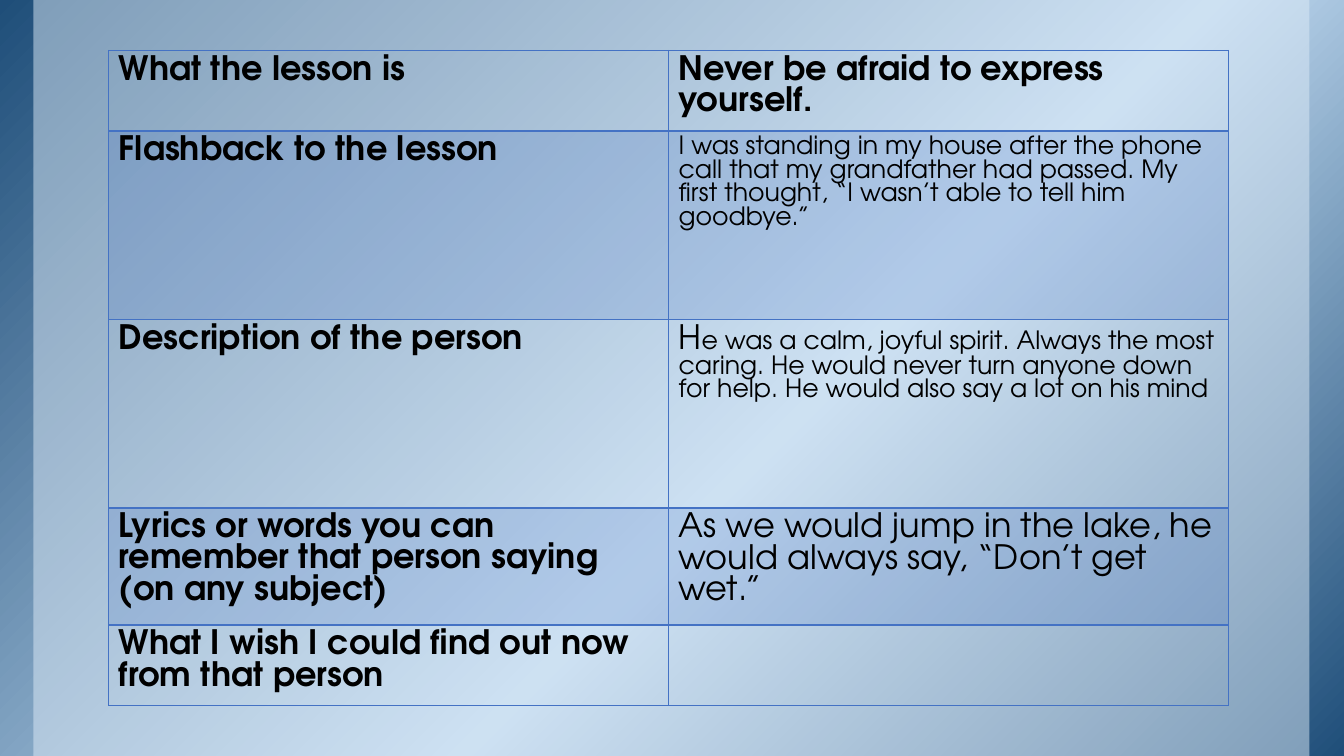
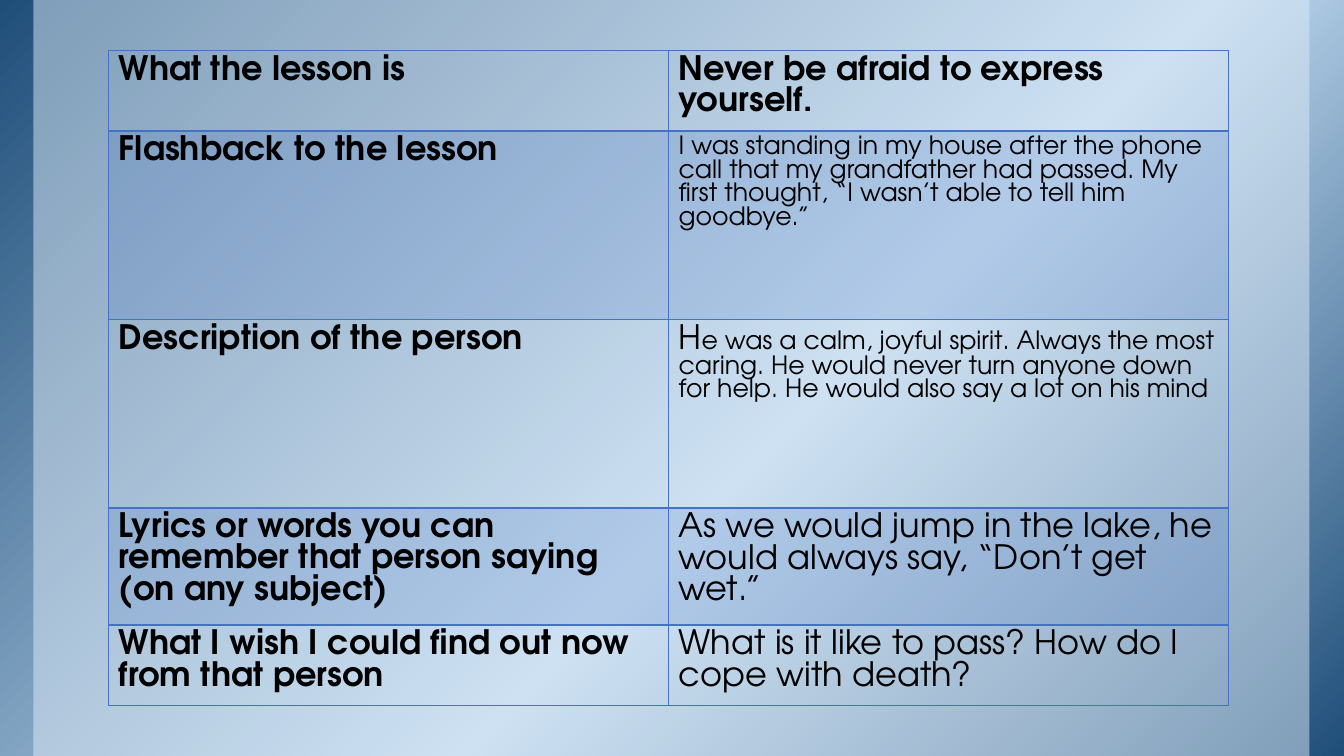
"""Build two slides that outline a lesson learned from a grandfather."""
from dataclasses import dataclass

from lxml.etree import SubElement
from pptx import Presentation
from pptx.dml.color import RGBColor
from pptx.enum.shapes import MSO_SHAPE as Preset
from pptx.oxml.ns import qn
from pptx.util import Cm, Pt

FONT = "TeX Gyre Adventor"
TEXT = "000000"
ACCENT = "4472C4"
PANEL = "DEEBF7"
GRADIENT_STOPS = ((0, "1F4E79"), (58, "BDD7EE"), (100, "1F4E79"))
GRADIENT_ANGLE = 45
SLIDE_WIDTH, SLIDE_HEIGHT = 33.87, 19.05
PANEL_LEFT, PANEL_WIDTH = 0.84, 32.16
TABLE_LEFT, TABLE_TOP = 2.74, 1.27
COLUMN_WIDTH = 14.11
BAND_OPACITY = 20
PANEL_OPACITY = 50


@dataclass(frozen=True)
class Words:
    text: str
    size: int = 24
    bold: bool = False


@dataclass(frozen=True)
class Topic:
    height: float
    label: str
    answer: tuple[Words, ...] = ()


LAST_LABEL = "What I wish I could find out now from that person"
SHARED_TOPICS = (
    Topic(2.03, "What the lesson is",
          (Words("Never be afraid to express yourself.", bold=True),)),
    Topic(4.75, "Flashback to the lesson",
          (Words("I was standing in my house after the phone call that my grandfather "
                 "had passed. My first thought, “I wasn’t able to tell him goodbye.”", 18),)),
    Topic(4.75, "Description of the person",
          (Words("H"),
           Words("e was a calm, joyful spirit. Always the most caring. He would never turn "
                 "anyone down for help. He would also say a lot on his mind", 18))),
    Topic(2.95, "Lyrics or words you can remember that person saying (on any subject)",
          (Words("As we would jump in the lake, he would always say, “Don’t get wet.”"),)),
)
LAST_ANSWERS = (
    (),
    (Words("What is it like to pass? How do I cope with death?"),),
)


def color(value: str) -> RGBColor:
    return RGBColor.from_string(value)


def fill_solid(fill, value: str, owner, opacity: int) -> None:
    fill.solid()
    fill.fore_color.rgb = color(value)
    solid = owner.find(qn("a:solidFill"))
    SubElement(solid[0], qn("a:alpha"), val=str(opacity * 1000))


def fill_gradient(shape) -> None:
    shape.fill.gradient()
    gradient = shape.element.spPr.find(qn("a:gradFill"))
    for child in list(gradient):
        gradient.remove(child)
    stops = SubElement(gradient, qn("a:gsLst"))
    for position, value in GRADIENT_STOPS:
        stop = SubElement(stops, qn("a:gs"), pos=str(position * 1000))
        SubElement(stop, qn("a:srgbClr"), val=value)
    SubElement(gradient, qn("a:lin"), ang=str(GRADIENT_ANGLE * 60000), scaled="0")


def add_backdrop_rectangle(slide, left: float, width: float):
    shape = slide.shapes.add_shape(Preset.RECTANGLE, Cm(left), Cm(0), Cm(width), Cm(SLIDE_HEIGHT))
    shape.shadow.inherit = False
    shape.line.fill.background()
    return shape


def add_backdrop(layout, slide) -> None:
    for placeholder in list(layout.placeholders):
        layout.shapes.element.remove(placeholder.element)
    backdrop = add_backdrop_rectangle(slide, 0, SLIDE_WIDTH)
    fill_gradient(backdrop)
    panel = add_backdrop_rectangle(slide, PANEL_LEFT, PANEL_WIDTH)
    fill_solid(panel.fill, PANEL, panel.element.spPr, PANEL_OPACITY)
    for shape in (backdrop, panel):
        layout.shapes.element.append(shape.element)


def add_borders(properties) -> None:
    for side in ("lnL", "lnR", "lnT", "lnB"):
        line = SubElement(properties, qn(f"a:{side}"), w=str(Pt(1)))
        solid = SubElement(line, qn("a:solidFill"))
        SubElement(solid, qn("a:srgbClr"), val=ACCENT)


def fill_cell(cell, content: tuple[Words, ...], banded: bool) -> None:
    properties = cell._tc.get_or_add_tcPr()
    add_borders(properties)
    if banded:
        fill_solid(cell.fill, ACCENT, properties, BAND_OPACITY)
    else:
        cell.fill.background()
    paragraph = cell.text_frame.paragraphs[0]
    for words in content:
        run = paragraph.add_run()
        run.text = words.text
        run.font.name = FONT
        run.font.size = Pt(words.size)
        run.font.bold = words.bold
        run.font.color.rgb = color(TEXT)


def add_topic_table(slide, topics: tuple[Topic, ...]) -> None:
    height = sum(topic.height for topic in topics)
    table = slide.shapes.add_table(
        len(topics), 2, Cm(TABLE_LEFT), Cm(TABLE_TOP), Cm(2 * COLUMN_WIDTH), Cm(height)
    ).table
    table.first_row = False
    table.horz_banding = False
    for column in table.columns:
        column.width = Cm(COLUMN_WIDTH)
    for index, topic in enumerate(topics):
        table.rows[index].height = Cm(topic.height)
        label = (Words(topic.label, bold=True),)
        for column_index, content in enumerate((label, topic.answer)):
            fill_cell(table.cell(index, column_index), content, index % 2 == 1)


def main() -> None:
    presentation = Presentation()
    presentation.slide_width = Cm(SLIDE_WIDTH)
    presentation.slide_height = Cm(SLIDE_HEIGHT)
    layout = presentation.slide_layouts[6]
    slides = [presentation.slides.add_slide(layout) for _ in LAST_ANSWERS]
    add_backdrop(layout, slides[0])
    for slide, answer in zip(slides, LAST_ANSWERS):
        add_topic_table(slide, SHARED_TOPICS + (Topic(2.03, LAST_LABEL, answer),))
    presentation.save("out.pptx")


if __name__ == "__main__":
    main()
